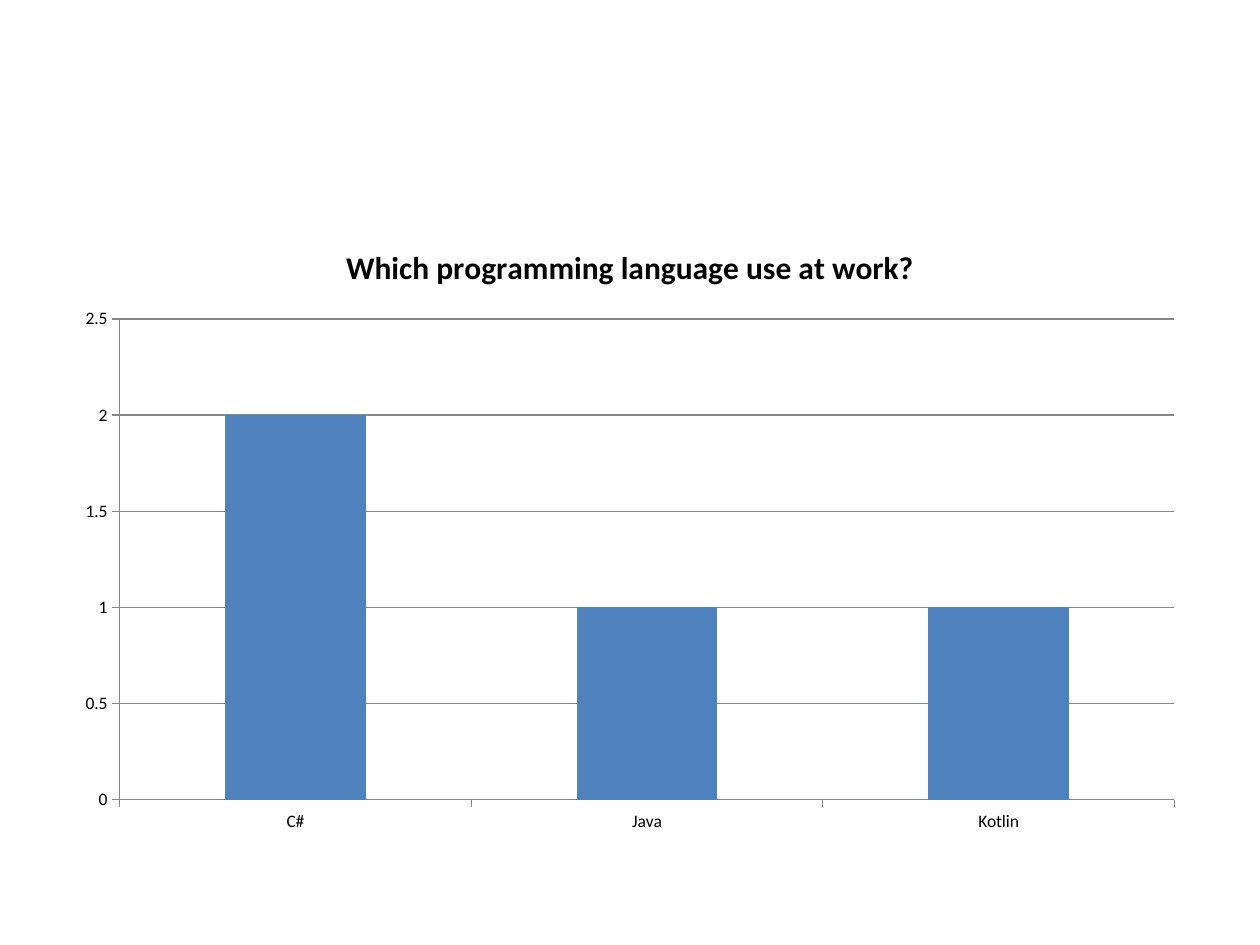
from pptx import Presentation
from pptx.chart.data import CategoryChartData as Data
from pptx.dml.color import RGBColor
from pptx.enum.chart import XL_CHART_TYPE as Kind, XL_TICK_MARK as Tick
from pptx.util import Pt

BLACK = RGBColor(0x00, 0x00, 0x00)
GRAY = RGBColor(0x87, 0x87, 0x87)
BLUE = RGBColor(0x4F, 0x81, 0xBD)
FACE = "Calibri"


def set_font(font, size, bold=False):
    font.name = FACE
    font.size = Pt(size)
    font.bold = bold
    font.color.rgb = BLACK


def set_line(line):
    line.color.rgb = GRAY
    line.width = Pt(0.75)


def set_title(chart, text):
    chart.has_title = True
    chart.chart_title.include_in_layout = False
    run = chart.chart_title.text_frame.paragraphs[0].add_run()
    run.text = text
    set_font(run.font, 18, True)


def set_axis(axis, grid):
    axis.major_tick_mark = Tick.OUTSIDE
    axis.minor_tick_mark = Tick.NONE
    axis.has_major_gridlines = grid
    set_font(axis.tick_labels.font, 10)
    set_line(axis.format.line)
    if grid:
        set_line(axis.major_gridlines.format.line)


def add_bars(slide, title, votes):
    data = Data()
    data.categories = list(votes)
    data.add_series("Series 1", list(votes.values()))
    chart = slide.shapes.add_chart(
        Kind.COLUMN_CLUSTERED, Pt(36), Pt(126), Pt(648), Pt(356.4), data
    ).chart
    set_font(chart.font, 10)
    chart.has_legend = False
    set_title(chart, title)

    set_axis(chart.category_axis, False)
    axis = chart.value_axis
    set_axis(axis, True)
    axis.minimum_scale, axis.maximum_scale, axis.major_unit = 0, 2.5, 0.5

    plot = chart.plots[0]
    plot.gap_width = 150
    plot.vary_by_categories = False
    fill = plot.series[0].format.fill
    fill.solid()
    fill.fore_color.rgb = BLUE


def main():
    deck = Presentation()
    deck.slide_width, deck.slide_height = Pt(720), Pt(540)
    slide = deck.slides.add_slide(deck.slide_layouts[6])
    votes = {"C#": 2, "Java": 1, "Kotlin": 1}
    add_bars(slide, "Which programming language use at work?", votes)
    deck.save("out.pptx")


if __name__ == "__main__":
    main()
